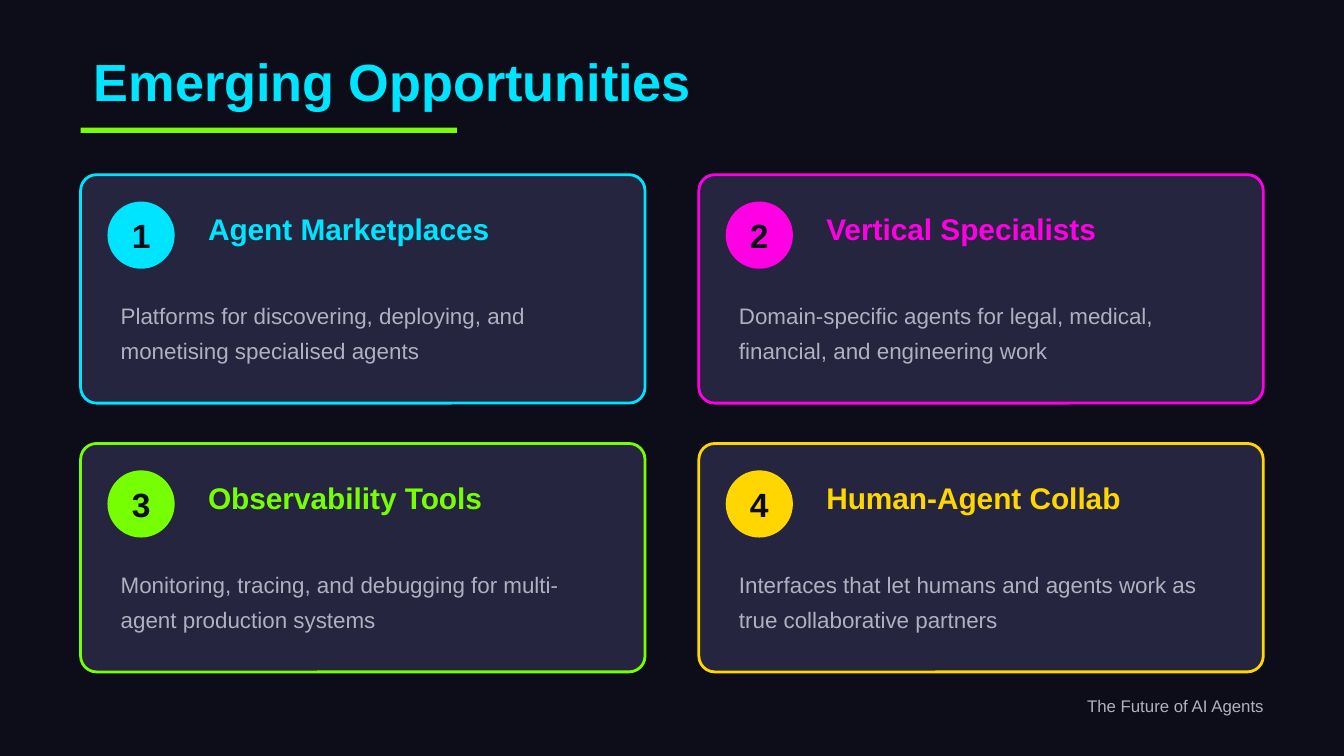
from pptx import Presentation
from pptx.dml.color import RGBColor
from pptx.enum.shapes import MSO_SHAPE as SHAPE
from pptx.enum.text import MSO_ANCHOR as ANCHOR, PP_ALIGN as ALIGN
from pptx.util import Inches, Pt

NIGHT = RGBColor(0x0D, 0x0D, 0x1A)
PANEL = RGBColor(0x25, 0x25, 0x40)
GREY = RGBColor(0xB0, 0xB0, 0xC0)
CYAN = RGBColor(0x00, 0xE5, 0xFF)
MAGENTA = RGBColor(0xFF, 0x00, 0xE5)
LIME = RGBColor(0x76, 0xFF, 0x03)
GOLD = RGBColor(0xFF, 0xD6, 0x00)

CARDS = [
    ("Agent Marketplaces", CYAN,
     "Platforms for discovering, deploying, and monetising specialised agents"),
    ("Vertical Specialists", MAGENTA,
     "Domain-specific agents for legal, medical, financial, and engineering work"),
    ("Observability Tools", LIME,
     "Monitoring, tracing, and debugging for multi-agent production systems"),
    ("Human-Agent Collab", GOLD,
     "Interfaces that let humans and agents work as true collaborative partners"),
]


def add_text(slide, x, y, w, h, text, size, color, bold=False, align=ALIGN.LEFT):
    box = slide.shapes.add_textbox(Inches(x), Inches(y), Inches(w), Inches(h))
    tf = box.text_frame
    tf.word_wrap = True
    tf.vertical_anchor = ANCHOR.MIDDLE
    p = tf.paragraphs[0]
    p.text = text
    p.alignment = align
    p.font.name = "Arial"
    p.font.size = Pt(size)
    p.font.bold = bold
    p.font.color.rgb = color
    return p


def add_shape(slide, kind, x, y, w, h, fill, line=None):
    sp = slide.shapes.add_shape(kind, Inches(x), Inches(y), Inches(w), Inches(h))
    sp.shadow.inherit = False
    sp.fill.solid()
    sp.fill.fore_color.rgb = fill
    if line is None:
        sp.line.fill.background()
    else:
        sp.line.color.rgb = line
        sp.line.width = Pt(1.5)
    return sp


def add_header(slide, x, y, w):
    add_text(slide, x, y, w, 0.6, "Emerging Opportunities", 28, CYAN, bold=True)
    add_shape(slide, SHAPE.RECTANGLE, x, y + 0.65, 2.8, 0.04, LIME)


def add_card(slide, x, y, w, h, number, title, color, body):
    pad = 0.2
    panel = add_shape(slide, SHAPE.ROUNDED_RECTANGLE, x, y, w, h, PANEL, color)
    panel.adjustments[0] = 0.07
    badge = (x + pad, y + pad, 0.5, 0.5)
    add_shape(slide, SHAPE.OVAL, *badge, color)
    add_text(slide, *badge, str(number), 18, NIGHT, bold=True, align=ALIGN.CENTER)
    add_text(slide, x + 0.85, y + pad, w - 1.1, 0.4, title, 16, color, bold=True)
    p = add_text(slide, x + pad, y + 0.8, w - 2 * pad, h - 1, body, 12, GREY)
    p.line_spacing = 1.3


def add_card_grid(slide, x, y, w, h, cols=2, gap_x=0.4, gap_y=0.3):
    rows = len(CARDS) // cols
    card_w = (w - gap_x * (cols - 1)) / cols
    card_h = (h - gap_y * (rows - 1)) / rows
    for i, card in enumerate(CARDS):
        row, col = divmod(i, cols)
        add_card(slide, x + col * (card_w + gap_x), y + row * (card_h + gap_y),
                 card_w, card_h, i + 1, *card)


def add_footer(slide, x, y, w, h):
    add_text(slide, x, y, w, h, "The Future of AI Agents", 9, GREY, align=ALIGN.RIGHT)


def main():
    prs = Presentation()
    prs.slide_width = Inches(10)
    prs.slide_height = Inches(10 * 9 / 16)
    slide = prs.slides.add_slide(prs.slide_layouts[6])
    slide.background.fill.solid()
    slide.background.fill.fore_color.rgb = NIGHT
    add_header(slide, 0.6, 0.3, 8.8)
    add_card_grid(slide, 0.6, 1.3, 8.8, 3.7)
    add_footer(slide, 0.5, 5.1, 9, 0.3)
    prs.save("out.pptx")


if __name__ == "__main__":
    main()
